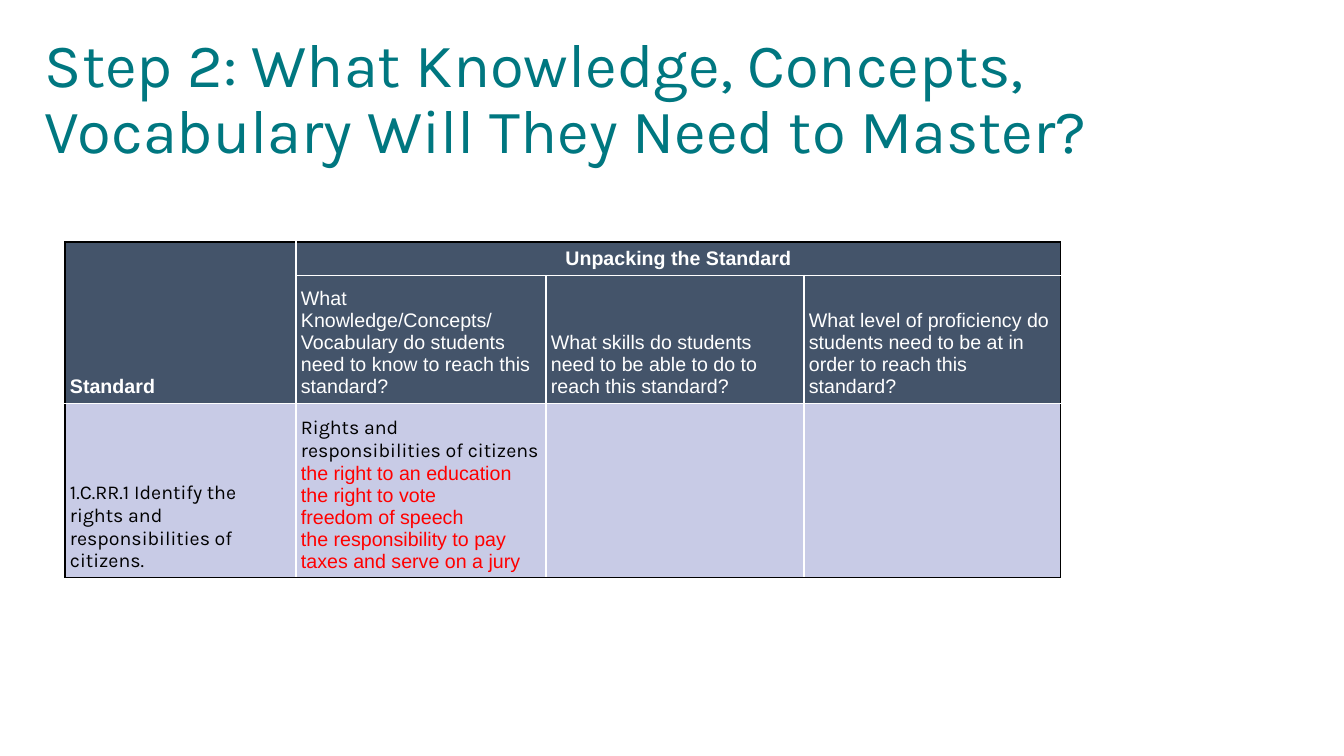
from itertools import accumulate

from lxml.etree import SubElement
from pptx import Presentation
from pptx.dml.color import RGBColor
from pptx.enum.text import MSO_ANCHOR as Anchor, PP_ALIGN as Align
from pptx.oxml.ns import qn
from pptx.util import Emu, Pt

PX = 914400 / 100.8
TEAL, SLATE, LAVENDER = "007780", "44546A", "C8CBE6"
WHITE, BLACK, RED = "FFFFFF", "000000", "FF0000"

TITLE = "Step 2: What Knowledge, Concepts, Vocabulary Will They Need to Master?"
COLUMNS = [231, 250, 258, 257]
ROWS = [32, 120, 166]
MERGES = [(0, 0, 1, 0), (0, 1, 0, 3)]
QUESTIONS = [
    "What Knowledge/Concepts/ Vocabulary do students need to know to reach this standard?",
    "What skills do students need to be able to do to reach this standard?",
    "What level of proficiency do students need to be at in order to reach this standard?",
]
STANDARD = "1.C.RR.1 Identify the rights and responsibilities of citizens."
KNOWLEDGE = "Rights and responsibilities of citizens"
EXAMPLES = [
    "the right to an education",
    "the right to vote",
    "freedom of speech",
    "the responsibility to pay taxes and serve on a jury",
]


def px(length):
    return Emu(round(length * PX))


def color(code):
    return RGBColor.from_string(code)


class Slide:
    """Draws titles, tables and cells on one blank page in a shared style."""

    def __init__(self, deck):
        self.page = deck.slides.add_slide(deck.slide_layouts[6])
        self.heading_font, self.body_font = "Karla", "Arial"

    def fill_para(self, para, text, size, font, tint, bold=False):
        para.text = text
        for span in para.runs:
            span.font.size, span.font.name = Pt(size), font
            span.font.bold, span.font.color.rgb = bold, color(tint)

    def title(self, left, top, width, height, text):
        box = self.page.shapes.add_textbox(px(left), px(top), px(width), px(height))
        frame = box.text_frame
        frame.word_wrap = True
        frame.vertical_anchor = Anchor.MIDDLE
        para = frame.paragraphs[0]
        para.line_spacing = 0.9
        self.fill_para(para, text, 44, self.heading_font, TEAL)

    def table(self, left, top, columns, rows, merges):
        frame = self.page.shapes.add_table(
            len(rows), len(columns), px(left), px(top), px(sum(columns)), px(sum(rows)))
        table = frame.table
        table.first_row = table.horz_banding = False
        for column, size in zip(table.columns, columns):
            column.width = px(size)
        for row, size in zip(table.rows, rows):
            row.height = px(size)
        for row, column, last_row, last_column in merges:
            table.cell(row, column).merge(table.cell(last_row, last_column))
        for row in range(len(rows)):
            for column in range(len(columns)):
                cell = table.cell(row, column)
                if not cell.is_spanned:
                    self.frame_cell(cell, {
                        "lnL": column == 0,
                        "lnR": column + cell.span_width == len(columns),
                        "lnT": row == 0,
                        "lnB": row + cell.span_height == len(rows),
                    })
                    cell.fill.solid()
                    last = row == len(rows) - 1
                    cell.fill.fore_color.rgb = color(LAVENDER if last else SLATE)
        return table

    def frame_cell(self, cell, edges):
        cell.margin_left = cell.margin_right = px(5)
        cell.margin_top = cell.margin_bottom = px(5)
        cell.vertical_anchor = Anchor.BOTTOM
        properties = cell._tc.get_or_add_tcPr()
        for edge, outer in edges.items():
            line = SubElement(properties, qn("a:" + edge), w=str(Pt(1)))
            fill = SubElement(line, qn("a:solidFill"))
            SubElement(fill, qn("a:srgbClr"), val=BLACK if outer else WHITE)

    def cell_text(self, cell, lines, font, tint, bold=False):
        frame = cell.text_frame
        for text in lines:
            first = frame.paragraphs[0]
            para = frame.add_paragraph() if first.runs else first
            self.fill_para(para, text, 14, font, tint, bold)


def main():
    deck = Presentation()
    deck.slide_width, deck.slide_height = px(1344), px(756)
    slide = Slide(deck)
    slide.title(35, 28, 1269, 145, TITLE)

    table = slide.table(65, 242, COLUMNS, ROWS, MERGES)
    arial, karla = slide.body_font, slide.heading_font
    slide.cell_text(table.cell(0, 0), ["Standard"], arial, WHITE, True)
    banner = table.cell(0, 1)
    slide.cell_text(banner, ["Unpacking the Standard"], arial, WHITE, True)
    banner.vertical_anchor = Anchor.MIDDLE
    banner.text_frame.paragraphs[0].alignment = Align.CENTER
    for column, question in enumerate(QUESTIONS, 1):
        slide.cell_text(table.cell(1, column), [question], arial, WHITE)
    slide.cell_text(table.cell(2, 0), [STANDARD], karla, BLACK)
    slide.cell_text(table.cell(2, 1), [KNOWLEDGE], karla, BLACK)
    slide.cell_text(table.cell(2, 1), EXAMPLES, arial, RED)
    deck.save("out.pptx")


if __name__ == "__main__":
    main()
